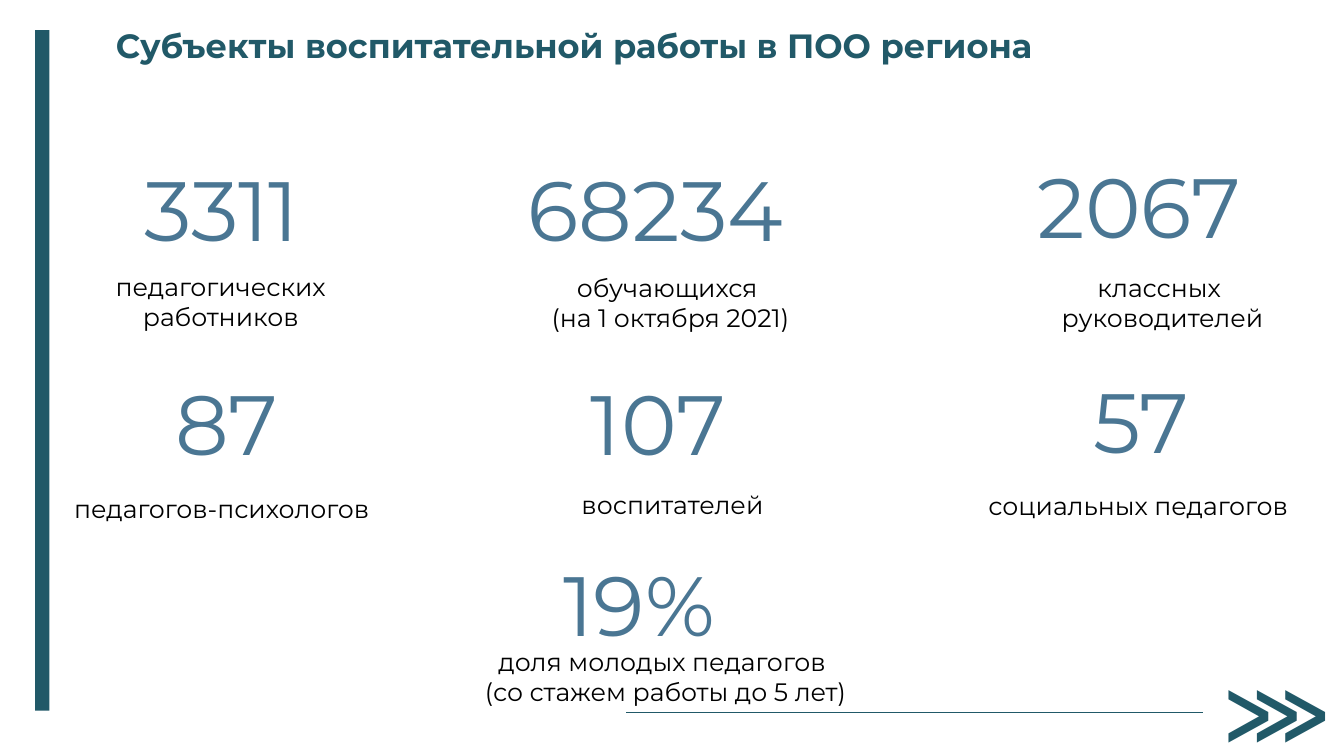
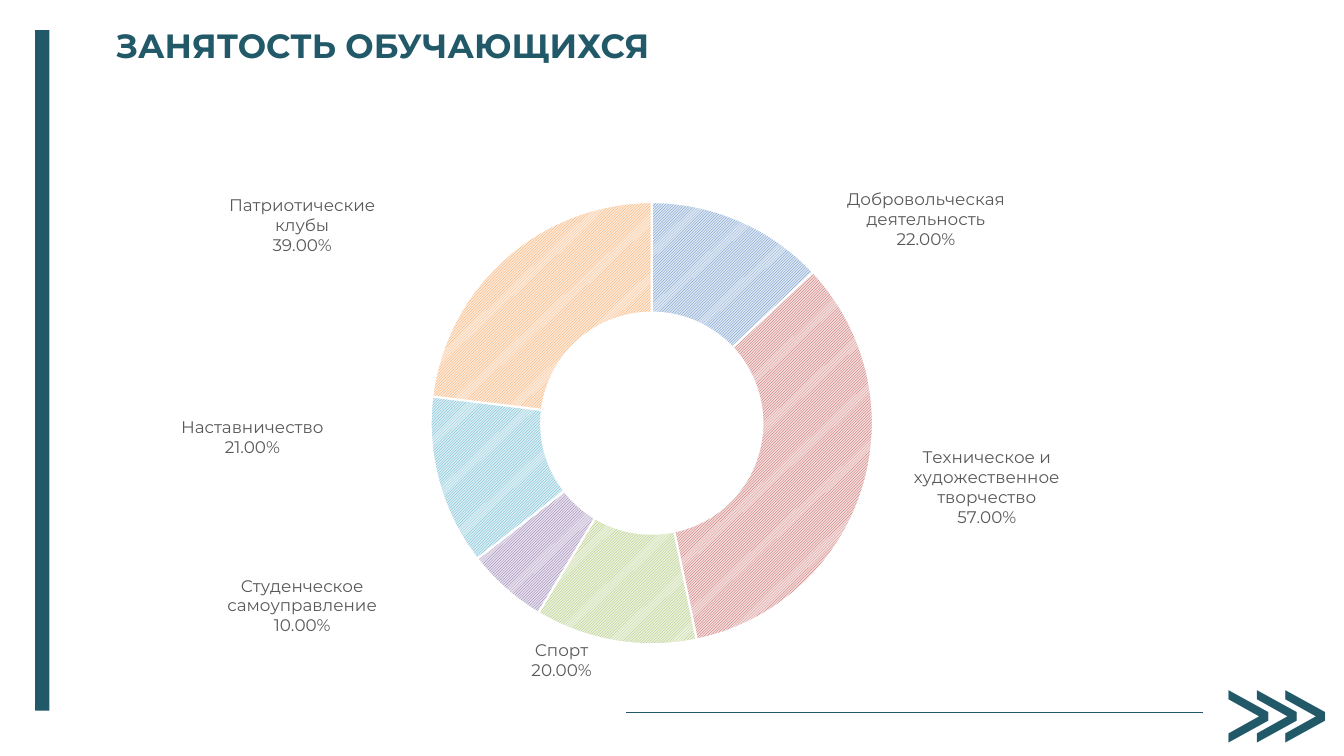
from dataclasses import dataclass

from lxml.etree import SubElement
from pptx import Presentation
from pptx.chart.data import CategoryChartData
from pptx.chart.series import PieSeries
from pptx.dml.color import RGBColor
from pptx.enum.chart import XL_CHART_TYPE
from pptx.enum.dml import MSO_PATTERN
from pptx.enum.shapes import MSO_CONNECTOR, MSO_SHAPE
from pptx.enum.text import MSO_AUTO_SIZE, PP_ALIGN
from pptx.oxml import parse_xml
from pptx.oxml.ns import nsdecls, qn
from pptx.presentation import Presentation as Deck
from pptx.slide import Slide
from pptx.text.text import Font
from pptx.util import Emu, Pt

SCALE = 9144
WIDE, HIGH = 1333, 750
FACE = "Montserrat"
TEAL = RGBColor(0x21, 0x59, 0x68)
STEEL = RGBColor(0x4A, 0x76, 0x93)
BLACK = RGBColor(0, 0, 0)
GREY = RGBColor(0x59, 0x59, 0x59)
WHITE = RGBColor(0xFF, 0xFF, 0xFF)


def px(count: int) -> Emu:
    return Emu(count * SCALE)


@dataclass(frozen=True)
class Box:
    left: int
    top: int
    width: int
    height: int

    def emu(self) -> tuple[Emu, Emu, Emu, Emu]:
        return px(self.left), px(self.top), px(self.width), px(self.height)


@dataclass(frozen=True)
class Style:
    size: int
    color: RGBColor
    bold: bool = False
    face: str = FACE
    align: PP_ALIGN = PP_ALIGN.LEFT


@dataclass(frozen=True)
class Stat:
    value: str
    center: int
    top: int
    label: str
    middle: int
    under: int
    width: int = 356
    height: int = 71


@dataclass(frozen=True)
class Slice:
    name: str
    share: float
    fore: RGBColor
    back: RGBColor
    shift: tuple[float, float]


TITLE = Style(24, TEAL, True)
ARROW = Style(54, TEAL, True, "Arial")
VALUE = Style(60, STEEL, align=PP_ALIGN.CENTER)
LABEL = Style(18, BLACK, align=PP_ALIGN.CENTER)
NOTE = Style(12, GREY)

STATS = (
    Stat("3311", 220, 151, "педагогических работников", 219, 264),
    Stat("68234", 650, 151, "обучающихся \n(на 1 октября 2021)", 665, 265),
    Stat("2067", 1130, 148, "классных \nруководителей", 1153, 265),
    Stat("87", 225, 364, "педагогов-психологов", 220, 484, height=40),
    Stat("107", 653, 364, "воспитателей", 667, 481, height=40),
    Stat("57", 1132, 362, "социальных педагогов", 1129, 482, height=40),
    Stat("19%", 634, 543, "доля молодых педагогов \n(со стажем работы до 5 лет)",
         660, 636, width=518),
)

SLICES = (
    Slice("Добровольческая деятельность", 0.22, RGBColor(0x4F, 0x81, 0xBD),
          RGBColor(0xDC, 0xE6, 0xF2), (0.2, -0.07)),
    Slice("Техническое и художественное творчество", 0.57,
          RGBColor(0xC0, 0x50, 0x4D), RGBColor(0xF2, 0xDC, 0xDB), (0.17, 0.02)),
    Slice("Спорт", 0.2, RGBColor(0x9B, 0xBB, 0x59),
          RGBColor(0xEB, 0xF1, 0xDE), (-0.06, 0.1)),
    Slice("Студенческое самоуправление", 0.1, RGBColor(0x80, 0x64, 0xA2),
          RGBColor(0xE6, 0xE0, 0xEC), (-0.23, 0.08)),
    Slice("Наставничество", 0.21, RGBColor(0x4B, 0xAC, 0xC6),
          RGBColor(0xDB, 0xEE, 0xF4), (-0.23, -0.04)),
    Slice("Патриотические клубы", 0.39, RGBColor(0xF7, 0x96, 0x46),
          RGBColor(0xFD, 0xEA, 0xDA), (-0.23, -0.1)),
)


def set_font(font: Font, style: Style) -> None:
    font.name = style.face
    font.size = Pt(style.size)
    font.bold = style.bold
    font.color.rgb = style.color


def add_text(slide: Slide, box: Box, text: str, style: Style) -> None:
    frame = slide.shapes.add_textbox(*box.emu()).text_frame
    frame.word_wrap = True
    frame.auto_size = MSO_AUTO_SIZE.SHAPE_TO_FIT_TEXT
    frame.text = text
    for para in frame.paragraphs:
        para.alignment = style.align
        for run in para.runs:
            set_font(run.font, style)


def add_page(deck: Deck, title: str) -> Slide:
    slide = deck.slides.add_slide(deck.slide_layouts[6])
    bar = slide.shapes.add_shape(MSO_SHAPE.RECTANGLE, *Box(35, 30, 14, 675).emu())
    bar.shadow.inherit = False
    bar.fill.solid()
    bar.fill.fore_color.rgb = TEAL
    bar.line.fill.background()
    add_text(slide, Box(105, 20, 1168, 50), title, TITLE)
    add_text(slide, Box(1204, 655, 98, 101), "⋙", ARROW)
    rule = slide.shapes.add_connector(
        MSO_CONNECTOR.STRAIGHT, px(621), px(707), px(1193), px(707))
    rule.line.color.rgb = TEAL
    rule.line.width = Pt(0.75)
    SubElement(rule._element.spPr, qn("a:effectLst"))
    return slide


def add_stat(slide: Slide, stat: Stat) -> None:
    add_text(slide, Box(stat.center - 150, stat.top, 300, 111), stat.value, VALUE)
    left = stat.middle - stat.width // 2
    add_text(slide, Box(left, stat.under, stat.width, stat.height), stat.label, LABEL)


def layout_xml(body: str) -> str:
    return (f"<c:layout {nsdecls('c')}><c:manualLayout>{body}"
            "</c:manualLayout></c:layout>")


def style_slice(series: PieSeries, index: int, part: Slice) -> None:
    point = series.points[index]
    fill = point.format.fill
    fill.patterned()
    fill.pattern = MSO_PATTERN.LIGHT_UPWARD_DIAGONAL
    fill.fore_color.rgb = part.fore
    fill.back_color.rgb = part.back
    point.format.line.color.rgb = WHITE
    point.format.line.width = Pt(1.5)
    set_font(point.data_label.font, NOTE)
    label = series._element.xpath(f"c:dLbls/c:dLbl[c:idx/@val='{index}']")[0]
    across, down = part.shift
    label.insert(1, parse_xml(layout_xml(f'<c:x val="{across}"/><c:y val="{down}"/>')))
    label.insert(2, parse_xml(
        f'<c:numFmt {nsdecls("c")} formatCode="0.00%" sourceLinked="0"/>'))
    label.find(qn("c:showCatName")).set("val", "1")
    SubElement(label, qn("c:separator")).text = "\n"


def add_ring(slide: Slide) -> None:
    data = CategoryChartData(number_format="0.00%")
    data.categories = [part.name for part in SLICES]
    data.add_series("Series 1", [part.share for part in SLICES])
    chart = slide.shapes.add_chart(
        XL_CHART_TYPE.DOUGHNUT, *Box(130, -26, 1033, 731).emu(), data).chart
    chart.has_legend = False
    chart.has_title = False
    set_font(chart.font, NOTE)
    plot = chart.plots[0]
    plot.vary_by_categories = True
    series = plot.series[0]
    labels = series.data_labels
    labels.show_value = True
    labels.show_category_name = True
    labels.number_format = "0.00%"
    labels.number_format_is_linked = False
    set_font(labels.font, NOTE)
    for index, part in enumerate(SLICES):
        style_slice(series, index, part)
    root = chart._chartSpace
    for leader in root.xpath(".//c:showLeaderLines"):
        leader.set("val", "0")
    root.xpath(".//c:holeSize")[0].set("val", "70")
    area = root.xpath(".//c:plotArea")[0]
    for old in area.findall(qn("c:layout")):
        area.remove(old)
    area.insert(0, parse_xml(layout_xml(
        '<c:layoutTarget val="inner"/><c:xMode val="edge"/><c:yMode val="edge"/>'
        '<c:x val="0.28"/><c:y val="0.31"/><c:w val="0.44"/><c:h val="0.6"/>')))


def main() -> None:
    deck = Presentation()
    deck.slide_width, deck.slide_height = px(WIDE), px(HIGH)
    facts = add_page(deck, "Субъекты воспитательной работы в ПОО региона")
    for stat in STATS:
        add_stat(facts, stat)
    add_ring(add_page(deck, "ЗАНЯТОСТЬ ОБУЧАЮЩИХСЯ"))
    deck.save("out.pptx")


if __name__ == "__main__":
    main()
